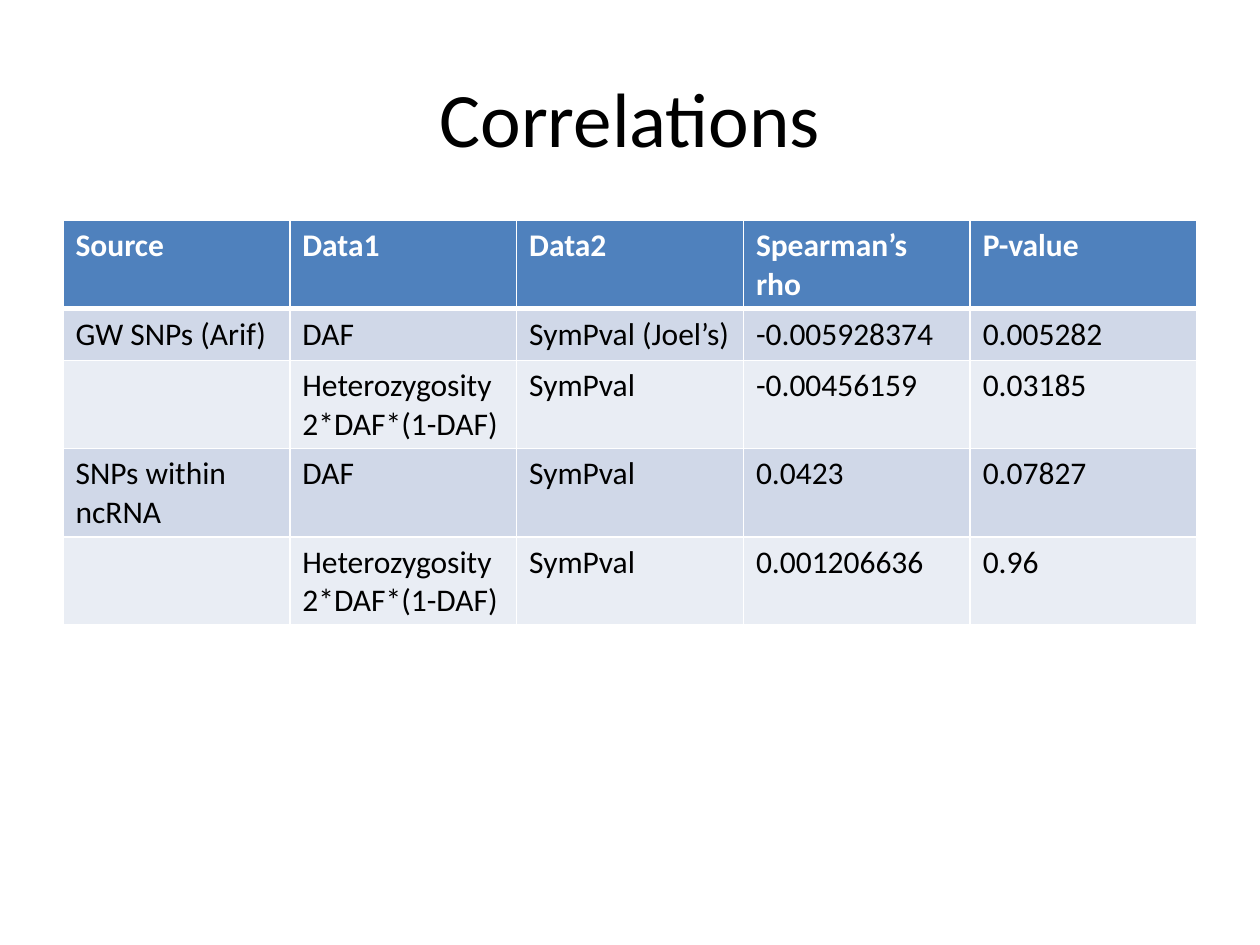
from lxml.etree import SubElement
from pptx import Presentation
from pptx.dml.color import RGBColor
from pptx.enum.text import MSO_ANCHOR, PP_ALIGN
from pptx.oxml.ns import qn
from pptx.util import Inches, Pt

WIDTH, HEIGHT = Inches(10), Inches(7.5)
MARGIN = 0.05  # share of the slide's width
FONT = "Calibri"
COLORS = {
    "text": "000000",
    "white": "FFFFFF",
    "head": "4F81BD",
    "odd": "D0D8E8",
    "even": "E9EDF4",
}
HET = "Heterozygosity 2*DAF*(1-DAF)"
ROWS = [
    ["Source", "Data1", "Data2", "Spearman’s rho", "P-value"],
    ["GW SNPs (Arif)", "DAF", "SymPval (Joel’s)", "-0.005928374", "0.005282"],
    ["", HET, "SymPval", "-0.00456159", "0.03185"],
    ["SNPs within ncRNA", "DAF", "SymPval", "0.0423", "0.07827"],
    ["", HET, "SymPval", "0.001206636", "0.96"],
]


def add_run(para, text, size, color, bold=False):
    run = para.add_run()
    run.text = text
    font = run.font
    font.name, font.size, font.bold = FONT, Pt(size), bold
    font.color.rgb = RGBColor.from_string(COLORS[color])


def add_title(slide, text):
    box = slide.shapes.add_textbox(
        int(WIDTH * MARGIN), int(HEIGHT * 0.04),
        int(WIDTH * (1 - 2 * MARGIN)), int(HEIGHT / 6))
    frame = box.text_frame
    frame.word_wrap = True
    frame.vertical_anchor = MSO_ANCHOR.MIDDLE
    para = frame.paragraphs[0]
    para.alignment = PP_ALIGN.CENTER
    add_run(para, text, 44, "text")


def set_edges(cell, widths):
    """Draw white cell borders; widths maps a side (L, R, T, B) to points."""
    props = cell._tc.get_or_add_tcPr()
    for side, width in widths.items():
        line = SubElement(props, qn(f"a:ln{side}"), w=str(Pt(width)))
        fill = SubElement(line, qn("a:solidFill"))
        SubElement(fill, qn("a:srgbClr"), val=COLORS["white"])


def fill_cell(cell, text, row):
    head = row == 0
    # The rule under the header is shared with the first body row.
    set_edges(cell, {"L": 1, "R": 1, "T": 3 if row == 1 else 1,
                     "B": 3 if head else 1})
    shade = "head" if head else "odd" if row % 2 else "even"
    cell.fill.solid()
    cell.fill.fore_color.rgb = RGBColor.from_string(COLORS[shade])
    if text:
        add_run(cell.text_frame.paragraphs[0], text, 18,
                "white" if head else "text", head)


def add_grid(slide, rows):
    """Add the table; rows with wrapped text grow beyond the base height."""
    table = slide.shapes.add_table(
        len(rows), len(rows[0]),
        int(WIDTH * MARGIN), Inches(1.75),
        int(WIDTH * (1 - 2 * MARGIN)), Inches(0.41) * len(rows)).table
    for r, row in enumerate(rows):
        for c, text in enumerate(row):
            fill_cell(table.cell(r, c), text, r)


def main():
    deck = Presentation()
    deck.slide_width, deck.slide_height = WIDTH, HEIGHT
    slide = deck.slides.add_slide(deck.slide_layouts[6])
    add_title(slide, "Correlations")
    add_grid(slide, ROWS)
    deck.save("out.pptx")


if __name__ == "__main__":
    main()
